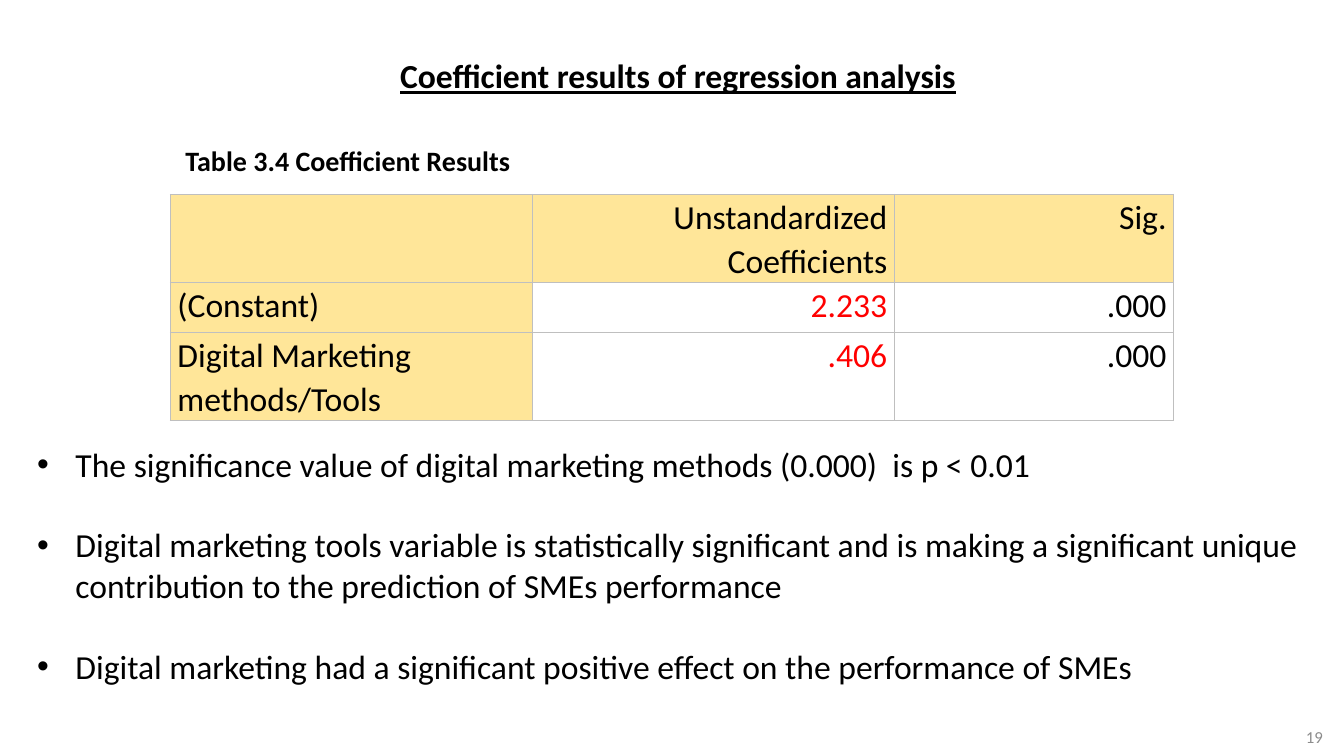
from lxml.etree import SubElement
from pptx import Presentation
from pptx.dml.color import RGBColor
from pptx.enum.text import MSO_ANCHOR, MSO_AUTO_SIZE, PP_ALIGN
from pptx.oxml.ns import qn
from pptx.util import Inches, Pt

BLACK, RED, GREY = "000000", "FF0000", "8C8C8C"
HEADER_FILL, BORDER = "FFE699", "BFBFBF"


def color(hex_string):
    return RGBColor.from_string(hex_string)


class SlideBuilder:
    font_name = "Calibri"
    body_size = 24

    def __init__(self, deck):
        self.page = deck.slides.add_slide(deck.slide_layouts[6])

    def style(self, para, size=body_size, ink=BLACK, bold=False, underline=False):
        for span in para.runs:
            span.font.name = self.font_name
            span.font.size = Pt(size)
            span.font.bold = bold
            span.font.underline = underline
            span.font.color.rgb = color(ink)

    def text(self, left, top, width, height, content, align=PP_ALIGN.LEFT,
             anchor=MSO_ANCHOR.TOP, **look):
        box = self.page.shapes.add_textbox(
            Inches(left), Inches(top), Inches(width), Inches(height))
        frame = box.text_frame
        frame.text = content
        frame.word_wrap = True
        frame.vertical_anchor = anchor
        if anchor == MSO_ANCHOR.TOP:
            frame.auto_size = MSO_AUTO_SIZE.SHAPE_TO_FIT_TEXT
        for para in frame.paragraphs:
            para.alignment = align
            self.style(para, **look)
        return frame

    def bullets(self, left, top, width, height, points, gap):
        frame = self.text(left, top, width, height, "\n".join(points))
        for index, para in enumerate(frame.paragraphs):
            if index:
                para.space_before = Pt(gap)
            properties = para._p.get_or_add_pPr()
            properties.set("marL", str(Inches(0.38)))
            properties.set("indent", str(-Inches(0.38)))
            SubElement(properties, qn("a:buFont"), typeface="Arial")
            SubElement(properties, qn("a:buChar"), char="•")

    def border(self, cell):
        properties = cell._tc.get_or_add_tcPr()
        for side in ("lnL", "lnR", "lnT", "lnB"):
            line = SubElement(properties, qn(f"a:{side}"), w=str(Pt(1)))
            fill = SubElement(line, qn("a:solidFill"))
            SubElement(fill, qn("a:srgbClr"), val=BORDER)

    def table(self, left, top, widths, heights, rows):
        grid = self.page.shapes.add_table(
            len(rows), len(widths), Inches(left), Inches(top),
            Inches(sum(widths)), Inches(sum(heights))).table
        grid.first_row = grid.horz_banding = False
        for column, width in zip(grid.columns, widths):
            column.width = Inches(width)
        for row, height in zip(grid.rows, heights):
            row.height = Inches(height)
        for r, values in enumerate(rows):
            for c, value in enumerate(values):
                self.cell(grid.cell(r, c), value, r == 0 or c == 0, c)

    def cell(self, cell, value, is_header, column):
        self.border(cell)
        if is_header:
            cell.fill.solid()
            cell.fill.fore_color.rgb = color(HEADER_FILL)
        else:
            cell.fill.background()
        cell.margin_left = cell.margin_right = Inches(0.07)
        cell.margin_top = cell.margin_bottom = 0
        cell.text_frame.text = value
        para = cell.text_frame.paragraphs[0]
        para.alignment = PP_ALIGN.RIGHT if column else PP_ALIGN.LEFT
        para.line_spacing = 1.07
        para.space_after = Pt(8)
        self.style(para, ink=RED if column == 1 and not is_header else BLACK)


def main():
    deck = Presentation()
    deck.slide_width, deck.slide_height = Inches(13.33), Inches(7.5)
    slide = SlideBuilder(deck)

    # Coefficient table
    slide.table(1.69, 1.93, [3.59, 3.59, 2.77], [0.87, 0.5, 0.87], [
        ["", "Unstandardized Coefficients", "Sig."],
        ["(Constant)", "2.233", ".000"],
        ["Digital Marketing methods/Tools", ".406", ".000"],
    ])

    # Table caption and slide title
    slide.text(1.74, 1.37, 9.98, 0.44, "Table 3.4 Coefficient Results",
               size=20, bold=True)
    slide.text(0.06, 0.5, 13.33, 0.5, "Coefficient results of regression analysis",
               align=PP_ALIGN.CENTER, bold=True, underline=True)

    # Findings
    slide.bullets(0.27, 4.35, 13.18, 2.52, [
        "The significance value of digital marketing methods (0.000)  is p < 0.01",
        "Digital marketing tools variable is statistically significant and is making "
        "a significant unique contribution to the prediction of SMEs performance",
        "Digital marketing had a significant positive effect on the performance of SMEs",
    ], gap=29)

    # Page number
    slide.text(10.22, 7.11, 3, 0.4, "19", align=PP_ALIGN.RIGHT,
               anchor=MSO_ANCHOR.MIDDLE, size=12, ink=GREY)

    deck.save("out.pptx")


if __name__ == "__main__":
    main()
